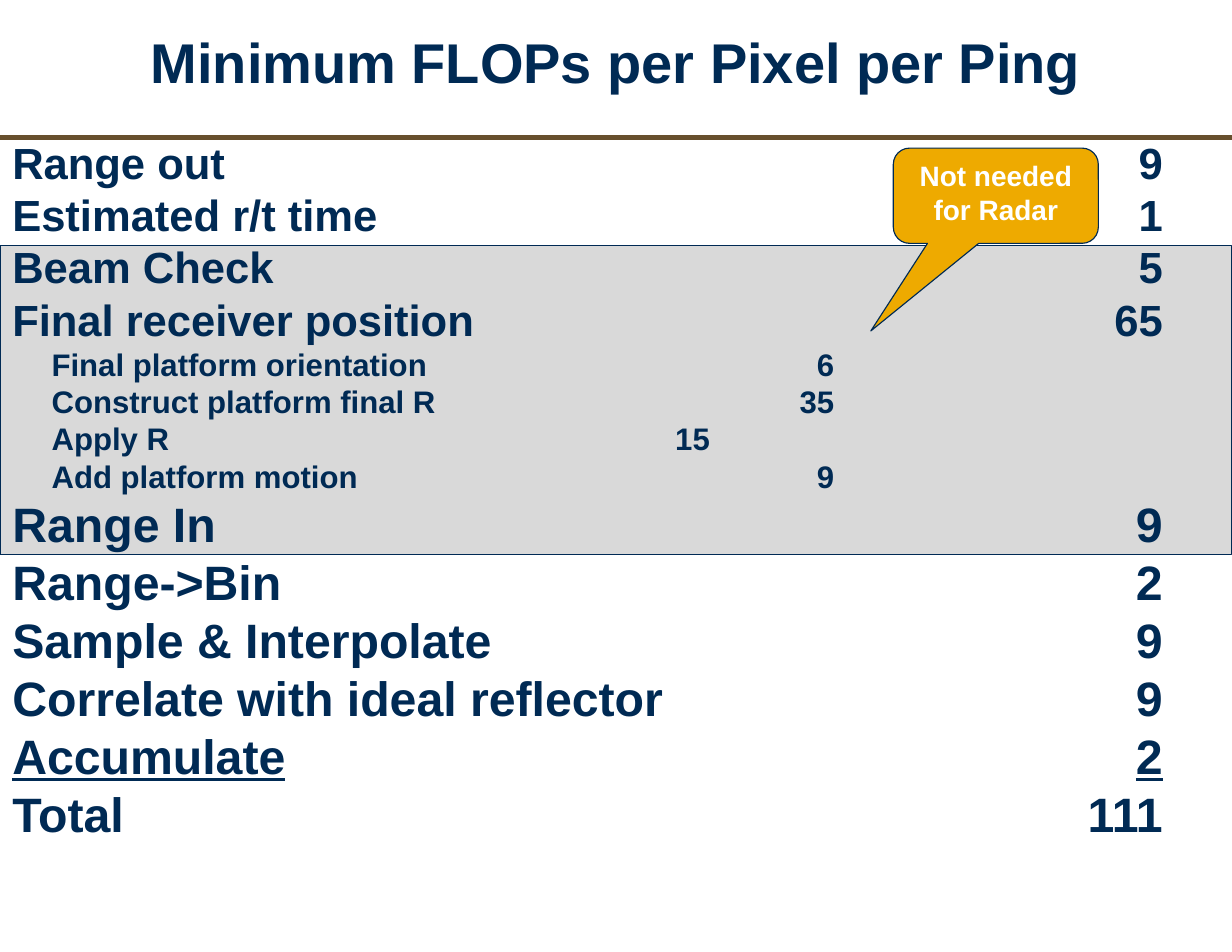
"""Build the slide that counts the minimum FLOPs per pixel per ping."""
from lxml import etree
from pptx import Presentation
from pptx.dml.color import RGBColor
from pptx.enum.shapes import MSO_CONNECTOR, MSO_SHAPE
from pptx.enum.text import MSO_ANCHOR, PP_ALIGN
from pptx.oxml.ns import qn
from pptx.util import Cm, Pt

NAVY = RGBColor(0x00, 0x2A, 0x54)
BROWN = RGBColor(0x67, 0x4F, 0x2D)
GREY = RGBColor(0xD9, 0xD9, 0xD9)
GOLD = RGBColor(0xEE, 0xAA, 0x00)
WHITE = RGBColor(0xFF, 0xFF, 0xFF)
RECT = MSO_SHAPE.RECTANGLE
CALLOUT = MSO_SHAPE.ROUNDED_RECTANGULAR_CALLOUT
STRAIGHT = MSO_CONNECTOR.STRAIGHT
CENTER = PP_ALIGN.CENTER
TOP, MIDDLE = MSO_ANCHOR.TOP, MSO_ANCHOR.MIDDLE

FONT = "Arial"
WIDTH, HEIGHT = Cm(27.94), Cm(21.59)
INDENT = Cm(0.89)
MAIN_TAB, SUB_TAB, NEAR_TAB = Cm(26.09), Cm(18.64), Cm(15.82)

# label, value, size, indent, tab, underline
STEPS = [
    ("Range out", "9", 28, 0, MAIN_TAB, False),
    ("Estimated r/t time", "1", 28, 0, MAIN_TAB, False),
    ("Beam Check", "5", 28, 0, MAIN_TAB, False),
    ("Final receiver position", "65", 28, 0, MAIN_TAB, False),
    ("Final platform orientation", "6", 20, INDENT, SUB_TAB, False),
    ("Construct platform final R", "35", 20, INDENT, SUB_TAB, False),
    ("Apply R", "15", 20, INDENT, NEAR_TAB, False),
    ("Add platform motion", "9", 20, INDENT, SUB_TAB, False),
    ("Range In", "9", 31, 0, MAIN_TAB, False),
    ("Range->Bin", "2", 31, 0, MAIN_TAB, False),
    ("Sample & Interpolate", "9", 31, 0, MAIN_TAB, False),
    ("Correlate with ideal reflector", "9", 31, 0, MAIN_TAB, False),
    ("Accumulate", "2", 31, 0, MAIN_TAB, True),
    ("Total", "111", 31, 0, MAIN_TAB, False),
]


def add_run(p, text, size, color=NAVY, underline=False):
    """Add one bold run to a paragraph."""
    r = p.add_run()
    r.text = text
    r.font.name, r.font.size, r.font.bold = FONT, Pt(size), True
    r.font.color.rgb = color
    if underline:
        r.font.underline = True


def set_frame(tf, anchor, x, y):
    """Set wrapping, anchor and the side and top insets of a text frame."""
    tf.word_wrap = True
    tf.vertical_anchor = anchor
    tf.margin_left = tf.margin_right = x
    tf.margin_top = tf.margin_bottom = y


def add_title(s, text):
    """Fill and place the title placeholder."""
    sp = s.shapes.title
    sp.left, sp.top, sp.width, sp.height = 0, 0, WIDTH, Cm(3.02)
    set_frame(sp.text_frame, MIDDLE, 0, 0)
    p = sp.text_frame.paragraphs[0]
    p.alignment, p.line_spacing = CENTER, 0.85
    add_run(p, text, 36)


def add_rule(s, y):
    """Draw the rule across the slide under the title."""
    line = s.shapes.add_connector(STRAIGHT, 0, y, WIDTH, y)
    line.line.color.rgb = BROWN
    line.line.width = Pt(3)
    etree.SubElement(line._element.spPr, qn("a:effectLst"))


def add_panel(s, kind, left, top, width, height, fill):
    """Add a filled shape with a thin navy outline."""
    sp = s.shapes.add_shape(kind, left, top, width, height)
    sp.shadow.inherit = False
    sp.fill.solid()
    sp.fill.fore_color.rgb = fill
    sp.line.color.rgb = NAVY
    sp.line.width = Pt(0.75)
    return sp


def add_callout(s, text):
    """Add the callout that points at the shaded steps."""
    sp = add_panel(s, CALLOUT, Cm(20.26), Cm(3.36), Cm(4.65), Cm(2.16), GOLD)
    for i, value in enumerate((-0.61, 1.42, 0.17)):
        sp.adjustments[i] = value
    set_frame(sp.text_frame, TOP, Cm(0.28), Cm(0.13))
    p = sp.text_frame.paragraphs[0]
    p.alignment = CENTER
    add_run(p, text, 18, WHITE)


def add_right_tab(p, indent, position):
    """Give a paragraph its left indent and one right-aligned tab stop."""
    pPr = p._p.get_or_add_pPr()
    if indent:
        pPr.set("marL", str(indent))
    tabs = etree.SubElement(pPr, qn("a:tabLst"))
    etree.SubElement(tabs, qn("a:tab"), pos=str(position - indent), algn="r")


def add_steps(s):
    """List every step with its operation count at a tab stop."""
    tf = s.shapes.add_textbox(0, Cm(2.98), Cm(27.33), Cm(16.3)).text_frame
    set_frame(tf, TOP, Cm(0.28), Cm(0.1))
    for i, (label, value, size, indent, tab, underline) in enumerate(STEPS):
        p = tf.add_paragraph() if i else tf.paragraphs[0]
        add_right_tab(p, indent, tab)
        add_run(p, label, size, underline=underline)
        add_run(p, "\t", size)
        add_run(p, value, size, underline=underline)


def main():
    """Build and save the slide."""
    prs = Presentation()
    prs.slide_width, prs.slide_height = WIDTH, HEIGHT
    s = prs.slides.add_slide(prs.slide_layouts[5])
    add_title(s, "Minimum FLOPs per Pixel per Ping")
    add_rule(s, Cm(3.12))
    add_panel(s, RECT, 0, Cm(5.56), WIDTH, Cm(7.01), GREY)
    add_callout(s, "Not needed for Radar")
    add_steps(s)
    prs.save("out.pptx")


if __name__ == "__main__":
    main()
